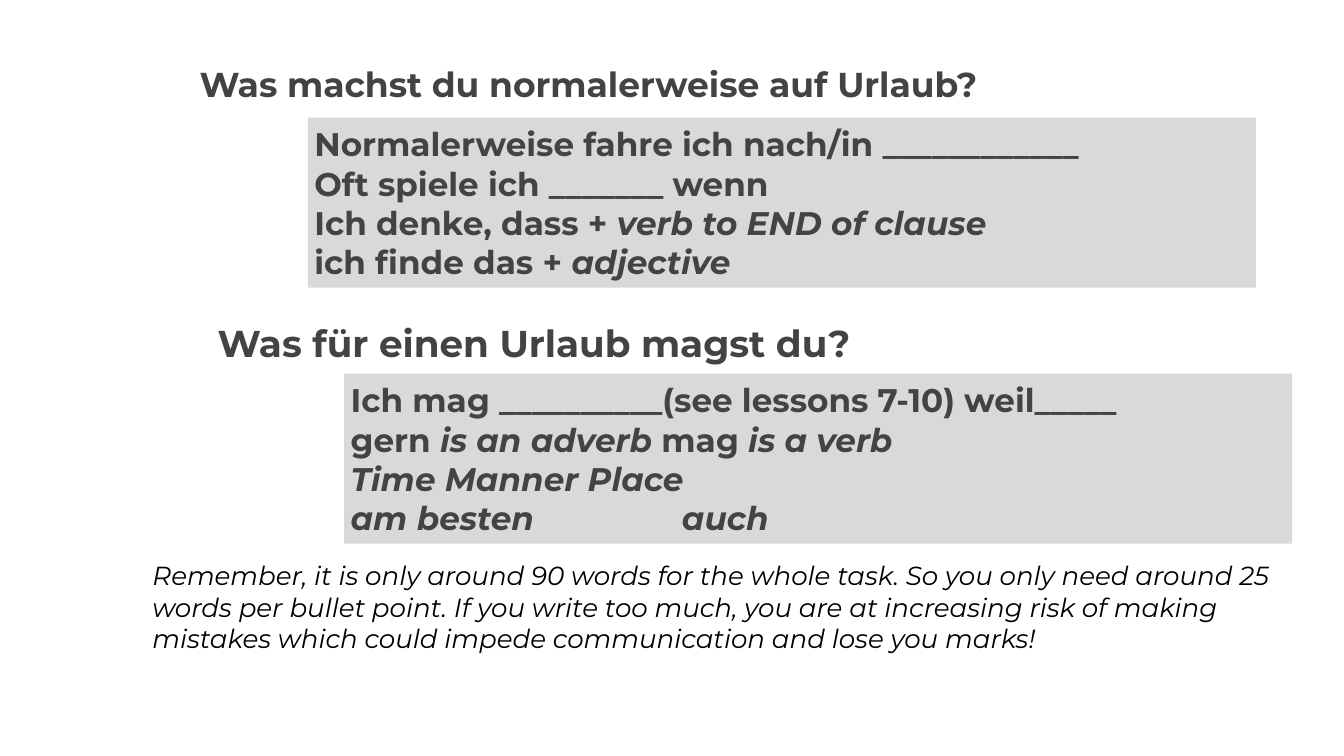
"""Build a German writing-support slide with two questions, sentence starters and a reminder."""
from lxml import etree
from pptx import Presentation
from pptx import util as u
from pptx.dml.color import RGBColor
from pptx.enum import shapes, text
from pptx.oxml.ns import qn

WIDTH, HEIGHT = 20, 11.25
FONT = "Montserrat"
COLORS = {"ink": "434343", "note": "000000", "panel": "D9D9D9"}
TAB_STOP = 4.93

# Positions are percentages of the slide: left, top, width, height.
QUESTIONS = [
    {
        "title": "Was machst du normalerweise auf Urlaub?",
        "size": 37,
        "title_area": (14.85, 7.56, 76.3, 8.89),
        "panel_area": (22.9, 15.56, 70.55, 22.49),
        "starters": [
            [("Normalerweise fahre ich nach/in ____________", False)],
            [("Oft spiele ich _______ wenn", False)],
            [("Ich denke, dass +", False), (" verb to END of clause", True)],
            [("ich finde das + ", False), ("adjective", True)],
        ],
    },
    {
        "title": "Was für einen Urlaub magst du?",
        "size": 40,
        "title_area": (16.2, 41.51, 76.3, 5.87),
        "panel_area": (25.6, 49.42, 70.55, 22.49),
        "starters": [
            [("Ich mag __________(see lessons 7-10) weil_____", False)],
            [("gern ", False), ("is an adverb", True), (" mag ", False), ("is a verb", True)],
            [("Time Manner Place", True)],
            [("am besten\tauch", True)],
        ],
    },
]
REMINDER = (
    "Remember, it is only around 90 words for the whole task. "
    "So you only need around 25 words per bullet point. "
    "If you write too much, you are at increasing risk of making mistakes "
    "which could impede communication and lose you marks!"
)
REMINDER_AREA = (10.85, 73.16, 88.65, 13.69)


def place(area):
    """Turn percentages of the slide into lengths."""
    return [u.Inches(share * side / 100) for share, side in zip(area, (WIDTH, HEIGHT) * 2)]


def write(box, lines, size, color="ink", bold=True, inset=0.1,
          anchor=text.MSO_ANCHOR.TOP, spacing=None, after=None):
    """Fill a box with lines made of (words, italic) spans."""
    frame = box.text_frame
    frame.word_wrap = True
    frame.vertical_anchor = anchor
    frame.margin_left = frame.margin_right = u.Inches(inset)
    frame.margin_top = frame.margin_bottom = u.Inches(inset)
    for index, line in enumerate(lines):
        para = frame.paragraphs[0] if index == 0 else frame.add_paragraph()
        para.alignment = text.PP_ALIGN.LEFT
        if spacing:
            para.line_spacing = spacing
        if after:
            para.space_after = u.Pt(after)
        if any("\t" in words for words, _ in line):
            tabs = etree.SubElement(para._p.get_or_add_pPr(), qn("a:tabLst"))
            etree.SubElement(tabs, qn("a:tab"), pos=str(u.Inches(TAB_STOP)), algn="l")
        for words, italic in line:
            span = para.add_run()
            span.text = words
            span.font.name = FONT
            span.font.size = u.Pt(size)
            span.font.bold = bold
            span.font.italic = italic
            span.font.color.rgb = RGBColor.from_string(COLORS[color])


def add_panel(page, area):
    """Add a plain grey rectangle."""
    panel = page.shapes.add_shape(shapes.MSO_SHAPE.RECTANGLE, *place(area))
    panel.shadow.inherit = False
    panel.fill.solid()
    panel.fill.fore_color.rgb = RGBColor.from_string(COLORS["panel"])
    panel.line.fill.background()
    return panel


def main():
    """Assemble and save the deck."""
    deck = Presentation()
    deck.slide_width, deck.slide_height = u.Inches(WIDTH), u.Inches(HEIGHT)
    page = deck.slides.add_slide(deck.slide_layouts[6])
    for question in QUESTIONS:
        heading = page.shapes.add_textbox(*place(question["title_area"]))
        write(heading, [[(question["title"], False)]], question["size"],
              inset=0, spacing=1.15, after=20)
        panel = add_panel(page, question["panel_area"])
        write(panel, question["starters"], 35, anchor=text.MSO_ANCHOR.MIDDLE)
    reminder = page.shapes.add_textbox(*place(REMINDER_AREA))
    write(reminder, [[(REMINDER, True)]], 28, color="note", bold=False)
    deck.save("out.pptx")


if __name__ == "__main__":
    main()
